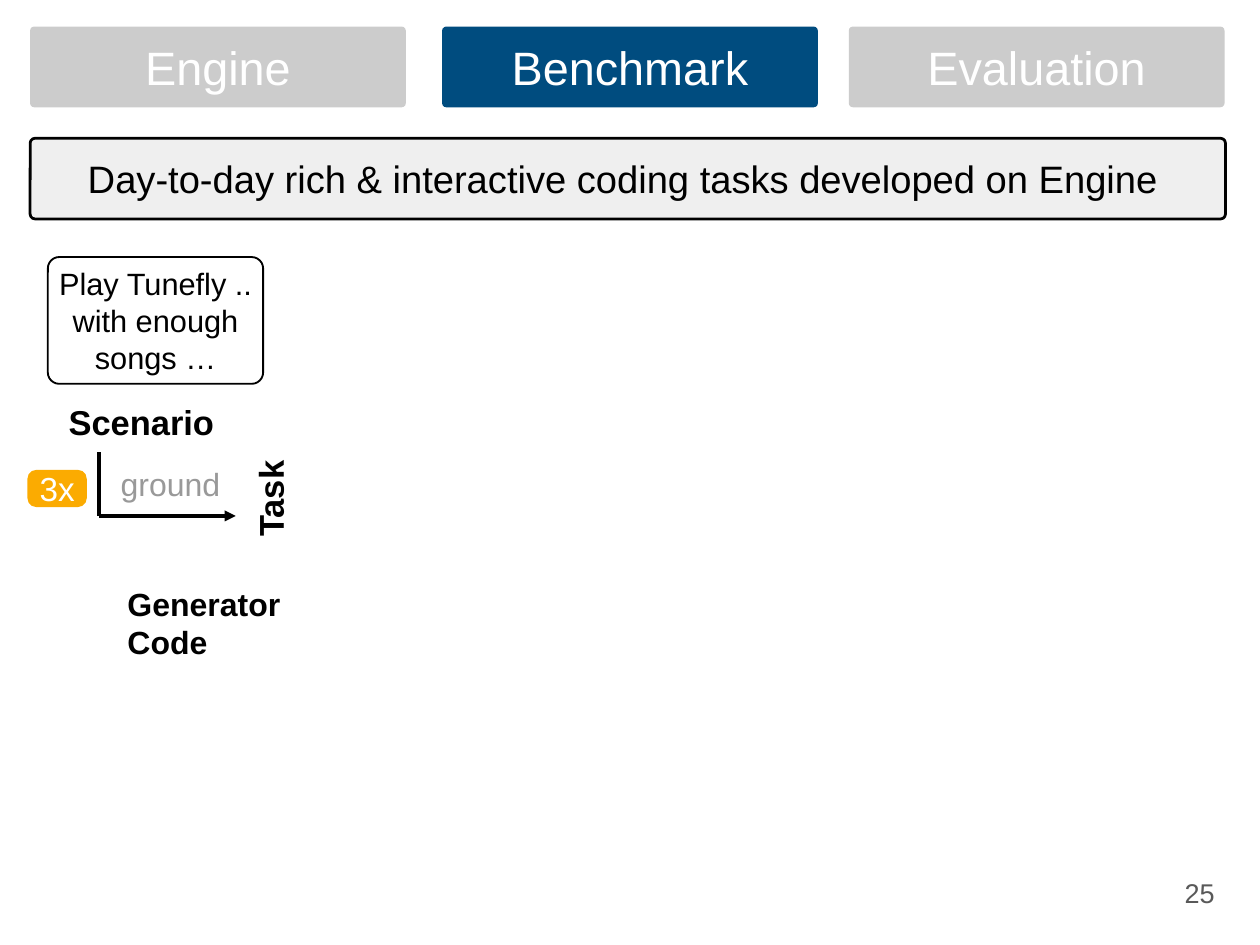
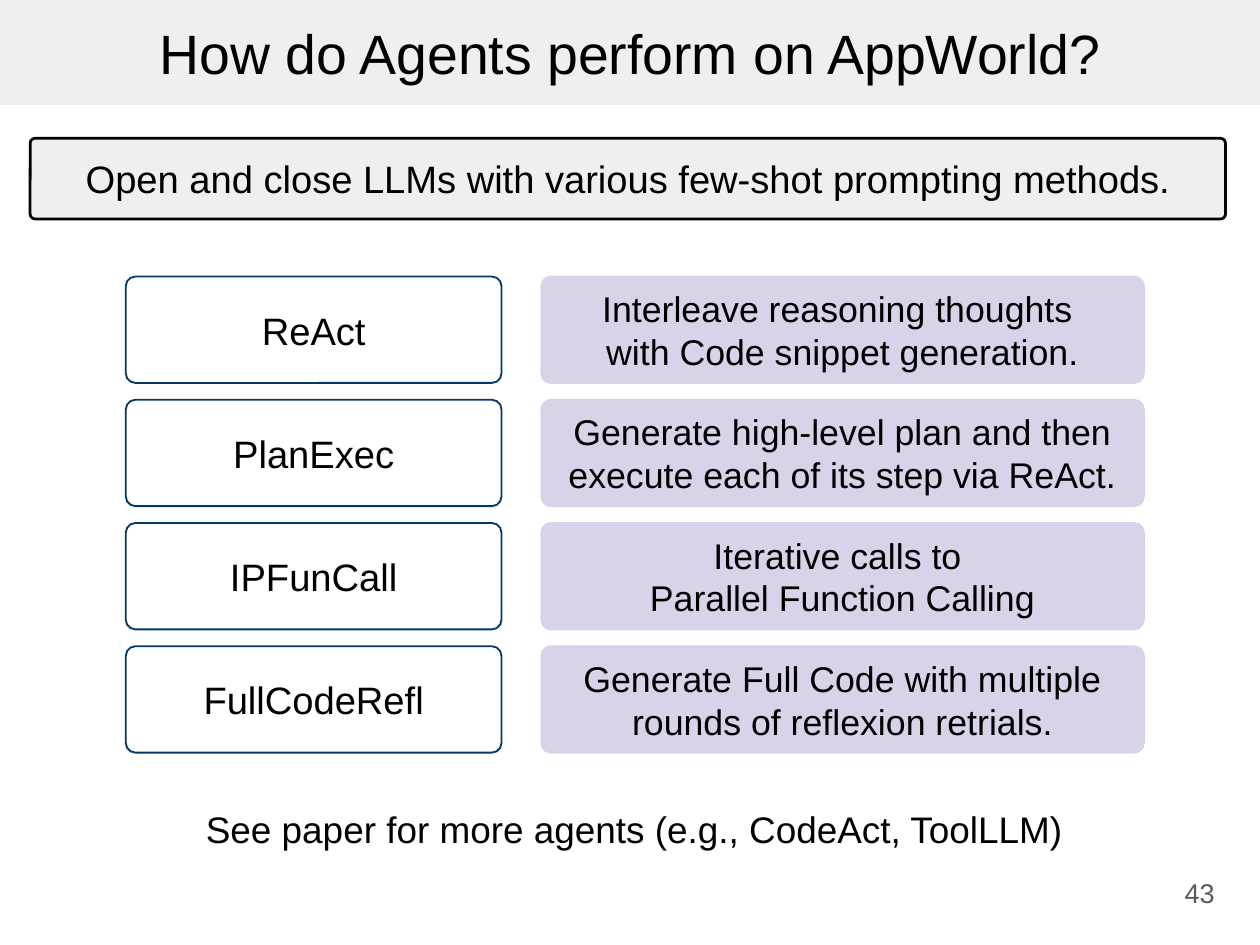
from lxml import etree
from pptx import Presentation
from pptx.dml.color import RGBColor
from pptx.enum.shapes import MSO_CONNECTOR, MSO_SHAPE
from pptx.enum.text import MSO_ANCHOR, MSO_AUTO_SIZE, PP_ALIGN
from pptx.oxml.ns import qn
from pptx.util import Inches, Pt

ROUNDED = MSO_SHAPE.ROUNDED_RECTANGLE
STRAIGHT = MSO_CONNECTOR.STRAIGHT
TOP, MIDDLE = MSO_ANCHOR.TOP, MSO_ANCHOR.MIDDLE
LEFT, CENTER, RIGHT = PP_ALIGN.LEFT, PP_ALIGN.CENTER, PP_ALIGN.RIGHT
NO_AUTOFIT = MSO_AUTO_SIZE.NONE

FONT = "Arial"
COLORS = {
    "black": "000000",
    "white": "FFFFFF",
    "inactive": "CCCCCC",
    "active": "004C7F",
    "band": "EFEFEF",
    "muted": "999999",
    "badge": "FBAB01",
    "navy": "073763",
    "lavender": "D9D2E9",
    "page_number": "595959",
}
SLIDE_WIDTH, SLIDE_HEIGHT = 14.22, 10.66
TITLE_ONLY, BLANK = 5, 6

TABS = [("Engine", 0.34), ("Benchmark", 4.99), ("Evaluation", 9.58)]
AGENTS = [
    ("ReAct", "Interleave reasoning thoughts \nwith Code snippet generation."),
    ("PlanExec", "Generate high-level plan and then execute each of its step via ReAct."),
    ("IPFunCall", "Iterative calls to \nParallel Function Calling"),
    ("FullCodeRefl", "Generate Full Code with multiple\nrounds of reflexion retrials."),
]
ROW_TOP, ROW_STEP, ROW_HEIGHT = 3.12, 1.39, 1.2


def rgb(name):
    return RGBColor.from_string(COLORS[name])


def write_text(shape, text, size, color="black", bold=False, align=CENTER, anchor=MIDDLE, inset=0.1):
    frame = shape.text_frame
    frame.word_wrap = True
    frame.auto_size = NO_AUTOFIT
    frame.vertical_anchor = anchor
    frame.margin_left = frame.margin_right = Inches(inset)
    frame.margin_top = frame.margin_bottom = Inches(inset)
    para = frame.paragraphs[0]
    para.text = text
    para.alignment = align
    for span in para.runs:
        span.font.name = FONT
        span.font.size = Pt(size)
        span.font.bold = bold
        span.font.color.rgb = rgb(color)


def paint(shape, fill=None, line=None, line_width=1.5):
    if fill:
        shape.fill.solid()
        shape.fill.fore_color.rgb = rgb(fill)
    else:
        shape.fill.background()
    if line:
        shape.line.color.rgb = rgb(line)
        shape.line.width = Pt(line_width)
    else:
        shape.line.fill.background()


def add_box(slide, text, place, size, corner=0.09, color="black", inset=0.03, **style):
    box = slide.shapes.add_shape(ROUNDED, *map(Inches, place))
    box.shadow.inherit = False
    box.adjustments[0] = corner
    paint(box, **style)
    write_text(box, text, size, color=color, inset=inset)


def add_label(slide, text, place, size, rotation=0, anchor=TOP, **text_format):
    label = slide.shapes.add_textbox(*map(Inches, place))
    label.rotation = rotation
    write_text(label, text, size, anchor=anchor, **text_format)


def add_line(slide, start, end, arrow=False):
    line = slide.shapes.add_connector(STRAIGHT, *map(Inches, start + end))
    line.line.color.rgb = rgb("black")
    line.line.width = Pt(3)
    if arrow:
        etree.SubElement(line.line._get_or_add_ln(), qn("a:tailEnd"), type="triangle")
    etree.SubElement(line._element.spPr, qn("a:effectLst"))


def add_banner(slide, text):
    add_box(slide, text, (0.34, 1.56, 13.49, 0.91), 31, corner=0.06,
            fill="band", line="black", line_width=2.25)


def add_page_number(slide, number):
    add_label(slide, str(number), (12.95, 9.66, 1.08, 0.82), 22, color="page_number",
              align=RIGHT, anchor=MIDDLE, inset=0.32)


def add_title(slide, text):
    title = slide.shapes.title
    title.left, title.top = 0, 0
    title.width, title.height = Inches(SLIDE_WIDTH), Inches(1.18)
    paint(title, fill="band", line="band", line_width=0.75)
    write_text(title, text, 45)


def add_tabs(slide, active):
    for name, left in TABS:
        add_box(slide, name, (left, 0.3, 4.24, 0.91), 38, corner=0.05, color="white",
                fill="active" if name == active else "inactive")


def build_benchmark(deck):
    slide = deck.slides.add_slide(deck.slide_layouts[BLANK])
    add_tabs(slide, "Benchmark")
    add_box(slide, "Play Tunefly .. with enough songs …", (0.54, 2.9, 2.43, 1.43), 25, line="black")
    add_label(slide, "Scenario", (0.67, 4.42, 1.85, 0.63), 28, bold=True)
    corner = (1.12, 5.82)
    add_line(slide, corner, (2.66, 5.82), arrow=True)
    add_line(slide, (1.12, 5.1), corner)
    add_label(slide, "ground", (1.22, 5.14, 1.41, 0.63), 26, color="muted")
    add_box(slide, "3x", (0.31, 5.3, 0.67, 0.42), 27, corner=0.24, color="white",
            inset=0.1, fill="badge")
    add_label(slide, "Generator Code", (1.34, 6.49, 2.1, 1), 26, bold=True, align=LEFT)
    add_label(slide, "Task", (2.51, 5.26, 1.14, 0.73), 28, rotation=270, bold=True)
    add_banner(slide, "Day-to-day rich & interactive coding tasks developed on Engine ")
    add_page_number(slide, 25)


def build_agents(deck):
    slide = deck.slides.add_slide(deck.slide_layouts[TITLE_ONLY])
    add_title(slide, "How do Agents perform on AppWorld?")
    add_banner(slide, "Open and close LLMs with various few-shot prompting methods.")
    for row, (agent, method) in enumerate(AGENTS):
        top = ROW_TOP + row * ROW_STEP
        add_box(slide, agent, (1.42, top, 4.24, ROW_HEIGHT), 31, line="navy")
        add_box(slide, method, (6.11, top, 6.8, ROW_HEIGHT), 29, fill="lavender", line="lavender")
    add_label(slide, "See paper for more agents (e.g., CodeAct, ToolLLM)", (1.42, 9, 11.48, 0.74), 30)
    add_page_number(slide, 43)


def main():
    deck = Presentation()
    deck.slide_width = Inches(SLIDE_WIDTH)
    deck.slide_height = Inches(SLIDE_HEIGHT)
    build_benchmark(deck)
    build_agents(deck)
    deck.save("out.pptx")


if __name__ == "__main__":
    main()
